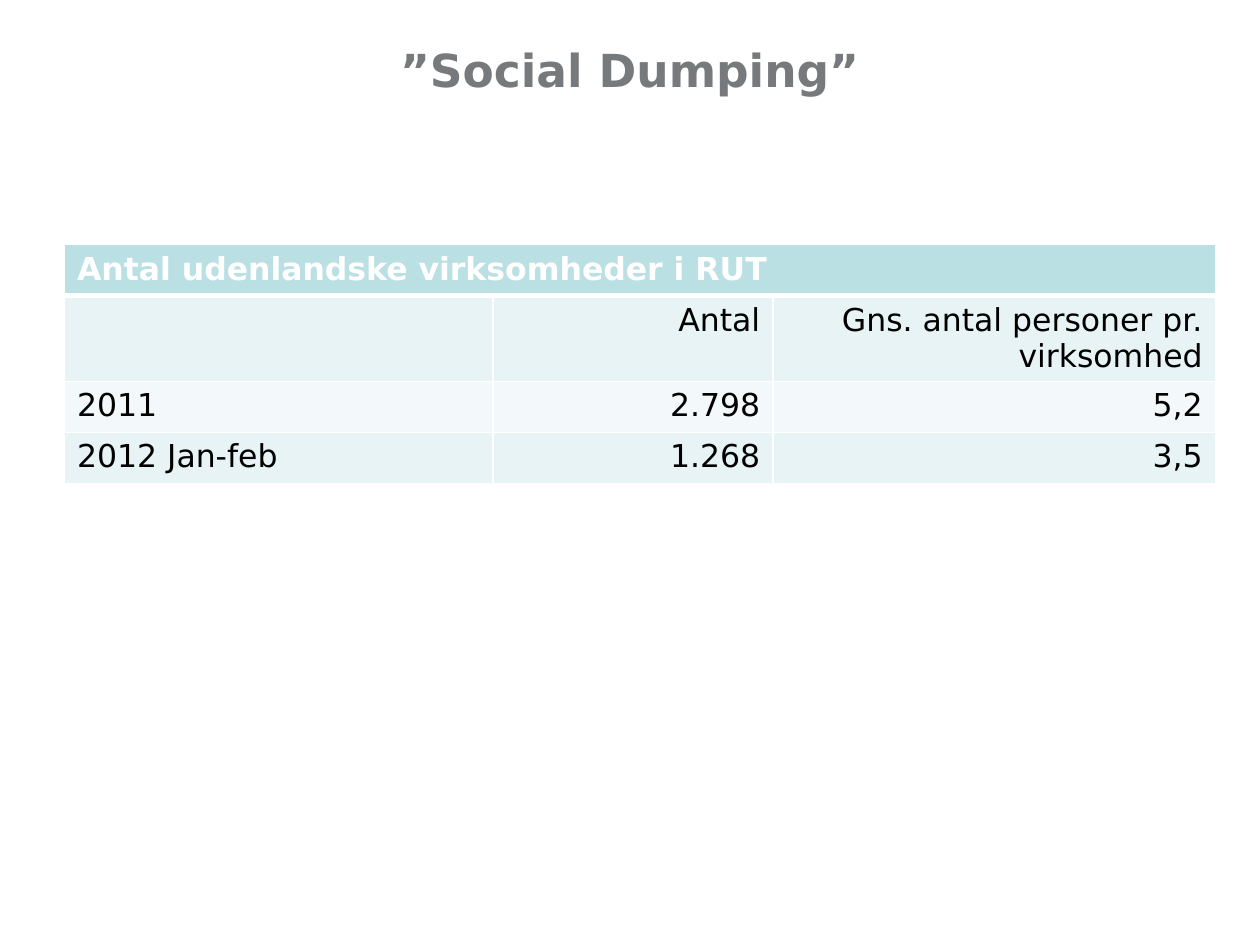
from dataclasses import dataclass

from lxml.etree import SubElement
from pptx import Presentation
from pptx.dml.color import RGBColor as RGB
from pptx.enum.text import MSO_ANCHOR as ANCHOR, PP_ALIGN as ALIGN
from pptx.oxml.ns import qn
from pptx.util import Cm, Pt


@dataclass(frozen=True)
class Theme:
    font: str = "DejaVu Sans"
    title_size: int = 26
    table_size: int = 18
    title: str = "777A7C"
    header: str = "BBE0E3"
    bands: tuple = ("F3F9FA", "E7F3F4")
    text: str = "000000"
    white: str = "FFFFFF"


THEME = Theme()


def write(tf, text, size, color, bold, align):
    p = tf.paragraphs[0]
    p.alignment = align
    r = p.add_run()
    r.text = text
    formats = {"name": THEME.font, "size": Pt(size), "bold": bold}
    for name, value in formats.items():
        setattr(r.font, name, value)
    r.font.color.rgb = RGB.from_string(color)


def set_borders(cell, widths):
    """Draw white cell edges; they must precede the fill in the XML."""
    tc_pr = cell._tc.get_or_add_tcPr()
    for edge, width in widths.items():
        ln = SubElement(tc_pr, qn(f"a:{edge}"), w=str(Pt(width)))
        fill = SubElement(ln, qn("a:solidFill"))
        SubElement(fill, qn("a:srgbClr"), val=THEME.white)


prs = Presentation()
prs.slide_width, prs.slide_height = Cm(25.4), Cm(19.05)
s = prs.slides.add_slide(prs.slide_layouts[5])

# Title
title = s.shapes.title
title_box = {"left": 1.7, "top": 0.53, "width": 22, "height": 1.75}
for name, value in title_box.items():
    setattr(title, name, Cm(value))
tf = title.text_frame
title_format = {"margin_left": 0, "margin_right": 0, "word_wrap": True,
                "vertical_anchor": ANCHOR.MIDDLE}
for name, value in title_format.items():
    setattr(tf, name, value)
write(tf, "”Social Dumping”", THEME.title_size, THEME.title, True, ALIGN.CENTER)

# Table of foreign companies
rows = [
    ["Antal udenlandske virksomheder i RUT", "", ""],
    ["", "Antal", "Gns. antal personer pr. virksomhed"],
    ["2011", "2.798", "5,2"],
    ["2012 Jan-feb", "1.268", "3,5"],
]
col_widths = [8.64, 5.64, 8.92]
row_height = 1.03
table = s.shapes.add_table(
    len(rows), len(col_widths), Cm(1.3), Cm(4.93),
    Cm(sum(col_widths)), Cm(row_height * len(rows))).table
for column, width in zip(table.columns, col_widths):
    column.width = Cm(width)
for row in table.rows:
    row.height = Cm(row_height)
table.cell(0, 0).merge(table.cell(0, len(col_widths) - 1))

for i, row in enumerate(rows):
    is_header = i == 0
    for j, text in enumerate(row):
        cell = table.cell(i, j)
        set_borders(cell, {"lnL": 1, "lnR": 1, "lnT": 3 if i == 1 else 1,
                           "lnB": 3 if is_header else 1})
        cell.fill.solid()
        cell.fill.fore_color.rgb = RGB.from_string(
            THEME.header if is_header else THEME.bands[i % 2])
        if text:
            write(cell.text_frame, text, THEME.table_size,
                  THEME.white if is_header else THEME.text, is_header,
                  ALIGN.RIGHT if j else ALIGN.LEFT)

prs.save("out.pptx")
